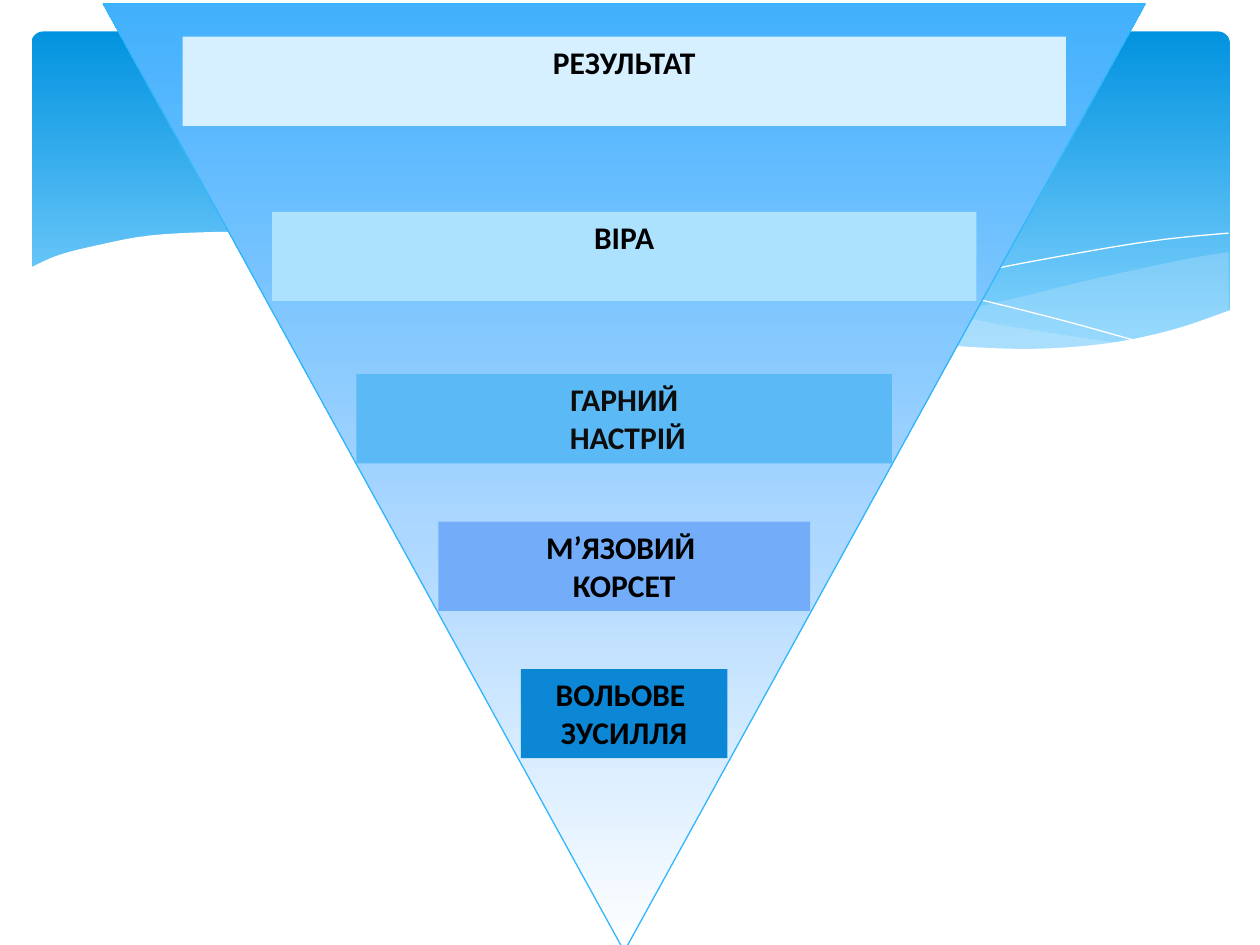
from lxml.etree import SubElement
from copy import deepcopy
from pptx import Presentation
from pptx.dml.color import RGBColor
from pptx.enum.shapes import MSO_SHAPE
from pptx.enum.text import MSO_ANCHOR, PP_ALIGN
from pptx.oxml.ns import qn
from pptx.util import Pt

WHITE = RGBColor(0xFF, 0xFF, 0xFF)
BLACK = RGBColor(0, 0, 0)
NEAR_BLACK = RGBColor(0x0D, 0x0D, 0x0D)
SKY_DARK = RGBColor(0x02, 0x93, 0xE0)
SKY_LIGHT = RGBColor(0x83, 0xD3, 0xFE)
WAVE = RGBColor(0xC6, 0xE7, 0xFC)
EDGE = RGBColor(0x31, 0xB6, 0xFD)
CONE_MID = RGBColor(0xAC, 0xD7, 0xFF)
CONE_TOP = RGBColor(0x42, 0xB0, 0xFD)

# Curves of the header, in points from the header's top left corner
WAVE_RIGHT = [
    [(684, 126), (655, 131), (602, 142.6), (561.6, 152.6), (524, 160.6),
     (490, 167), (458, 172.8)],
    [(458, 172.8), (489.6, 177), (527, 180.7), (568, 182), (603.4, 180),
     (633.6, 175.7), (660, 168.5), (684, 159.8)]]
WAVE_MIDDLE = [
    [(625, 178.6), (563, 169.2), (515.5, 159.8), (463, 148.3), (435, 141.8),
     (391.7, 131.8), (352, 124.6), (316.8, 119.5), (269, 115.9),
     (229.7, 115.9), (188, 119.5)],
    [(188, 119.5), (228, 125.3), (273, 134), (305, 141.8), (363.6, 154.8),
     (414.7, 165.6), (460.8, 173.5), (501.8, 179.3), (547, 182),
     (585, 182), (625, 178.6)]]
LINE_FALLING = [
    [(204.5, 122.4), (236, 118), (281.5, 116.6), (334, 118.8), (382, 123.8),
     (440, 131.8), (505.4, 144.7), (580, 162.7), (635, 177.8)]]
LINE_RISING = [
    [(423.4, 167), (482.4, 151.2), (540.7, 137.5), (605.5, 125.3),
     (647.3, 118.8), (684, 115.2)]]
COVER = [
    [(685.4, 159.1), (651.6, 170.6), (612, 178.6), (564.5, 181.4),
     (504.7, 177.8), (448.6, 170.6), (381.6, 158.4), (303.8, 140.4),
     (244.8, 127.4), (192, 118.8), (147.6, 115.2), (109.4, 114.5),
     (67.7, 116.6), (36.7, 122.4), (15, 128), (-1.4, 135.4)],
    [(-1.4, 218.9), (685.4, 218.9)]]

# Top, width, fill, text colour, lines of each bar, from the triangle's top
BARS = [
    (18.7, 504.7, "D6F0FF", BLACK, ["РЕЗУЛЬТАТ"]),
    (118.8, 402.5, "ADE2FE", BLACK, ["ВІРА"]),
    (211.6, 306, "5BBAF6", NEAR_BLACK, ["ГАРНИЙ", " НАСТРІЙ"]),
    (295.9, 212.4, "73ACF8", BLACK, ["М’ЯЗОВИЙ ", "КОРСЕТ"]),
    (380.1, 118.1, "0B87D6", BLACK, ["ВОЛЬОВЕ ", "ЗУСИЛЛЯ"]),
]
BAR_HEIGHT = 51


def smooth(points, steps=5):
    """Catmull-Rom curve through the points; two points stay straight."""
    if len(points) < 3:
        return points
    padded = [points[0]] + points + [points[-1]]
    curve = [points[0]]
    for a, b, c, d in zip(padded, padded[1:], padded[2:], padded[3:]):
        for i in range(1, steps + 1):
            t = i / steps
            curve.append(tuple(
                (2 * q + (r - p) * t + (2 * p - 5 * q + 4 * r - u) * t ** 2
                 + (3 * q - p - 3 * r + u) * t ** 3) / 2
                for p, q, r, u in zip(a, b, c, d)))
    return curve


def set_gradient(sp, stops):
    """Gradient from the shape's top to its bottom."""
    fill = sp.fill
    fill.gradient()
    fill.gradient_angle = 270
    gs_list = sp._element.spPr.find(qn("a:gradFill")).find(qn("a:gsLst"))
    while len(gs_list) < len(stops):
        gs_list.append(deepcopy(gs_list[0]))
    for stop, (position, color) in zip(fill.gradient_stops, stops):
        stop.position = position
        stop.color.rgb = color


def add_preset(s, kind, x, y, w, h):
    sp = s.shapes.add_shape(kind, Pt(x), Pt(y), Pt(w), Pt(h))
    sp.shadow.inherit = False
    sp.line.fill.background()
    return sp


def add_curve(s, x, y, sections, fill=None, alpha=100):
    """Filled outline, or a white hairline when there is no fill."""
    points = [(Pt(x + px), Pt(y + py))
              for section in sections for px, py in smooth(section)]
    builder = s.shapes.build_freeform(*points[0])
    builder.add_line_segments(points[1:], close=fill is not None)
    sp = builder.convert_to_shape()
    sp.shadow.inherit = False
    if fill is None:
        sp.fill.background()
        sp.line.color.rgb = WHITE
        sp.line.width = Pt(0)
        return
    sp.line.fill.background()
    sp.fill.solid()
    sp.fill.fore_color.rgb = fill
    if alpha < 100:
        color = sp._element.spPr.find(qn("a:solidFill"))[0]
        SubElement(color, qn("a:alpha"), val=str(alpha * 1000))


def add_header(s, x, y, w, h):
    # Sky panel
    sky = add_preset(s, MSO_SHAPE.ROUNDED_RECTANGLE, x, y, w, h)
    sky.adjustments[0] = 0.034
    set_gradient(sky, [(0, SKY_DARK), (0.9, SKY_LIGHT)])
    # Waves, hairlines and the white lower edge
    add_curve(s, x, y, WAVE_RIGHT, WAVE, 29)
    add_curve(s, x, y, WAVE_MIDDLE, WAVE, 40)
    add_curve(s, x, y, LINE_FALLING)
    add_curve(s, x, y, LINE_RISING)
    add_curve(s, x, y, COVER, WHITE)


def add_bar(s, x, y, w, h, fill, color, lines):
    sp = add_preset(s, MSO_SHAPE.RECTANGLE, x, y, w, h)
    sp.fill.solid()
    sp.fill.fore_color.rgb = RGBColor.from_string(fill)
    tf = sp.text_frame
    tf.word_wrap = True
    tf.vertical_anchor = MSO_ANCHOR.TOP
    for i, line in enumerate(lines):
        p = tf.paragraphs[0] if i == 0 else tf.add_paragraph()
        p.alignment = PP_ALIGN.CENTER
        r = p.add_run()
        r.text = line
        for name, value in {"name": "Calibri", "size": Pt(18),
                            "bold": True}.items():
            setattr(r.font, name, value)
        r.font.color.rgb = color


def add_pyramid(s, x, y, w, h):
    # Triangle standing on its tip
    cone = add_preset(s, MSO_SHAPE.ISOSCELES_TRIANGLE, x, y, w, h)
    cone.rotation = 180
    set_gradient(cone, [(0, WHITE), (0.44, CONE_MID), (1, CONE_TOP)])
    cone.line.color.rgb = EDGE
    cone.line.width = Pt(0.75)
    # Bars centred on the triangle's axis, from the tip up
    for top, width, *look in reversed(BARS):
        add_bar(s, x + (w - width) / 2, y + top, width, BAR_HEIGHT, *look)


def main():
    prs = Presentation()
    prs.slide_width, prs.slide_height = Pt(720), Pt(540)
    s = prs.slides.add_slide(prs.slide_layouts[6])
    add_header(s, 18, 18, 684.7, 194.4)
    add_pyramid(s, 59, 2.2, 595.4, 541.4)
    prs.save("out.pptx")


if __name__ == "__main__":
    main()
